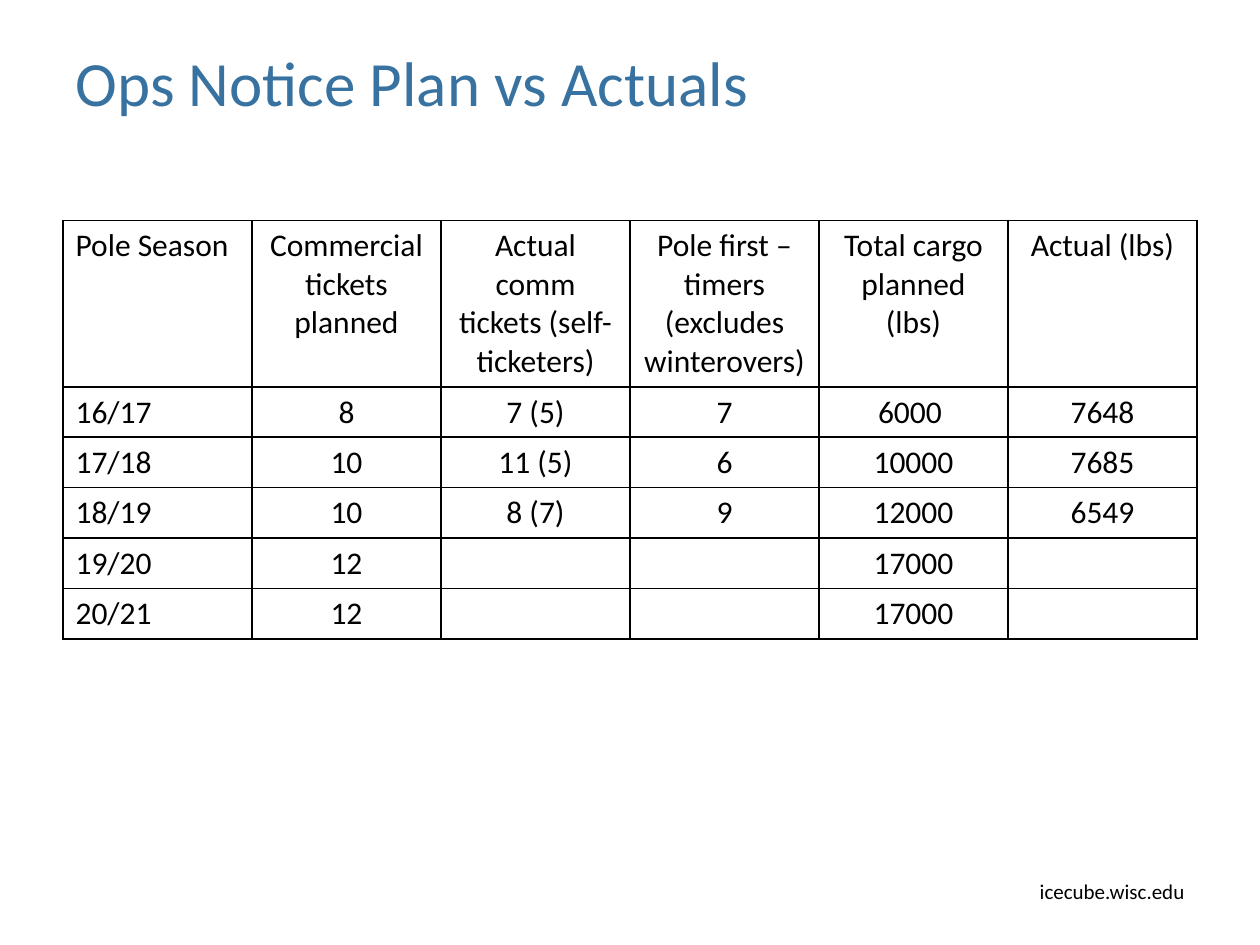
import pptx
import pptx.dml.color
import pptx.enum.text
import pptx.oxml
import pptx.oxml.ns
import pptx.util
from pptx.util import Inches

BLACK = pptx.dml.color.RGBColor(0x00, 0x00, 0x00)
TITLE_BLUE = pptx.dml.color.RGBColor(0x38, 0x72, 0xA0)
ALIGN = pptx.enum.text.PP_ALIGN
ANCHOR = pptx.enum.text.MSO_ANCHOR

COLUMN_WIDTH = 1.5
HEADER_HEIGHT = 1.32
ROW_HEIGHT = 0.4
SEASONS = [
    ["Pole Season", "Commercial tickets planned", "Actual comm tickets (self-ticketers)",
     "Pole first – timers (excludes winterovers)", "Total cargo planned (lbs)", "Actual (lbs)"],
    ["16/17", "8", "7 (5)", "7", "6000 ", "7648"],
    ["17/18", "10", "11 (5)", "6", "10000", "7685"],
    ["18/19", "10", "8 (7)", "9", "12000", "6549"],
    ["19/20", "12", "", "", "17000", ""],
    ["20/21", "12", "", "", "17000", ""],
]


def write_text(text_frame, text, size, color, alignment):
    text_frame.text = text
    paragraph = text_frame.paragraphs[0]
    paragraph.alignment = alignment
    for run in paragraph.runs:
        run.font.name = "Calibri"
        run.font.size = pptx.util.Pt(size)
        run.font.color.rgb = color


def add_title(slide, text):
    title = slide.shapes.title
    title.left, title.top = Inches(0.5), Inches(0.17)
    title.width, title.height = Inches(8), Inches(0.95)
    title.text_frame.vertical_anchor = ANCHOR.MIDDLE
    write_text(title.text_frame, text, 36, TITLE_BLUE, ALIGN.LEFT)


def add_footer(slide, text):
    footer = slide.shapes.add_textbox(Inches(3.67), Inches(6.92), Inches(5.83), Inches(0.3))
    footer.text_frame.word_wrap = True
    write_text(footer.text_frame, text, 12, BLACK, ALIGN.RIGHT)


def add_borders(cell):
    properties = cell._tc.get_or_add_tcPr()
    for side in ("lnL", "lnR", "lnT", "lnB"):
        properties.append(pptx.oxml.parse_xml(
            f'<a:{side} {pptx.oxml.ns.nsdecls("a")} w="{pptx.util.Pt(1)}">'
            f'<a:solidFill><a:srgbClr val="{BLACK}"/></a:solidFill></a:{side}>'
        ))


def add_season_table(slide, rows):
    column_count = len(rows[0])
    height = HEADER_HEIGHT + ROW_HEIGHT * (len(rows) - 1)
    table = slide.shapes.add_table(
        len(rows), column_count, Inches(0.5), Inches(1.75),
        Inches(COLUMN_WIDTH * column_count), Inches(height),
    ).table
    table.first_row = False
    table.horz_banding = False
    for row_index, values in enumerate(rows):
        table.rows[row_index].height = Inches(ROW_HEIGHT if row_index else HEADER_HEIGHT)
        for column_index, value in enumerate(values):
            cell = table.cell(row_index, column_index)
            add_borders(cell)
            cell.fill.background()
            alignment = ALIGN.CENTER if column_index else ALIGN.LEFT
            write_text(cell.text_frame, value, 18, BLACK, alignment)


def main():
    presentation = pptx.Presentation()
    presentation.slide_width = Inches(10)
    presentation.slide_height = Inches(7.5)
    slide = presentation.slides.add_slide(presentation.slide_layouts[5])
    add_footer(slide, "icecube.wisc.edu")
    add_title(slide, "Ops Notice Plan vs Actuals")
    add_season_table(slide, SEASONS)
    presentation.save("out.pptx")


if __name__ == "__main__":
    main()
